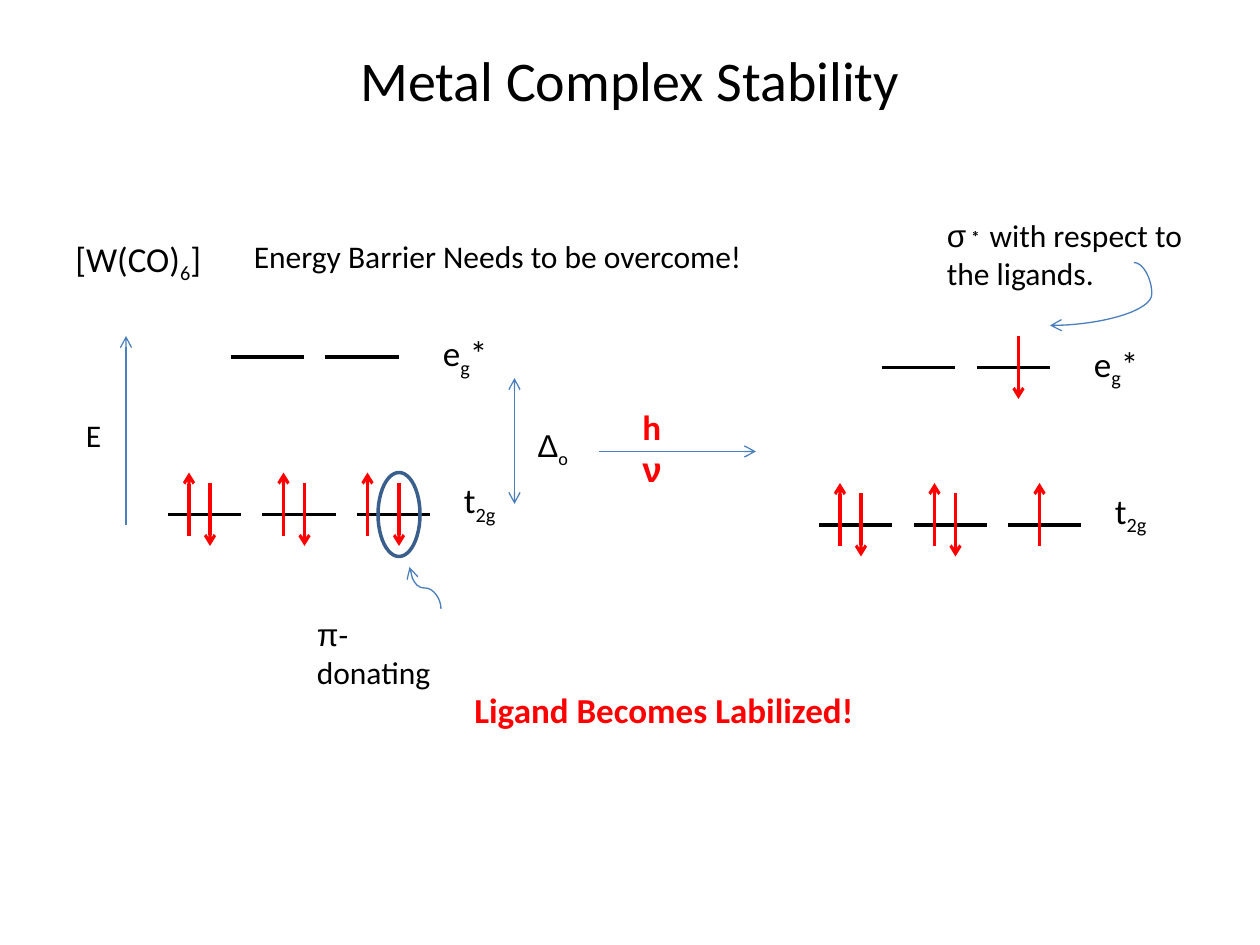
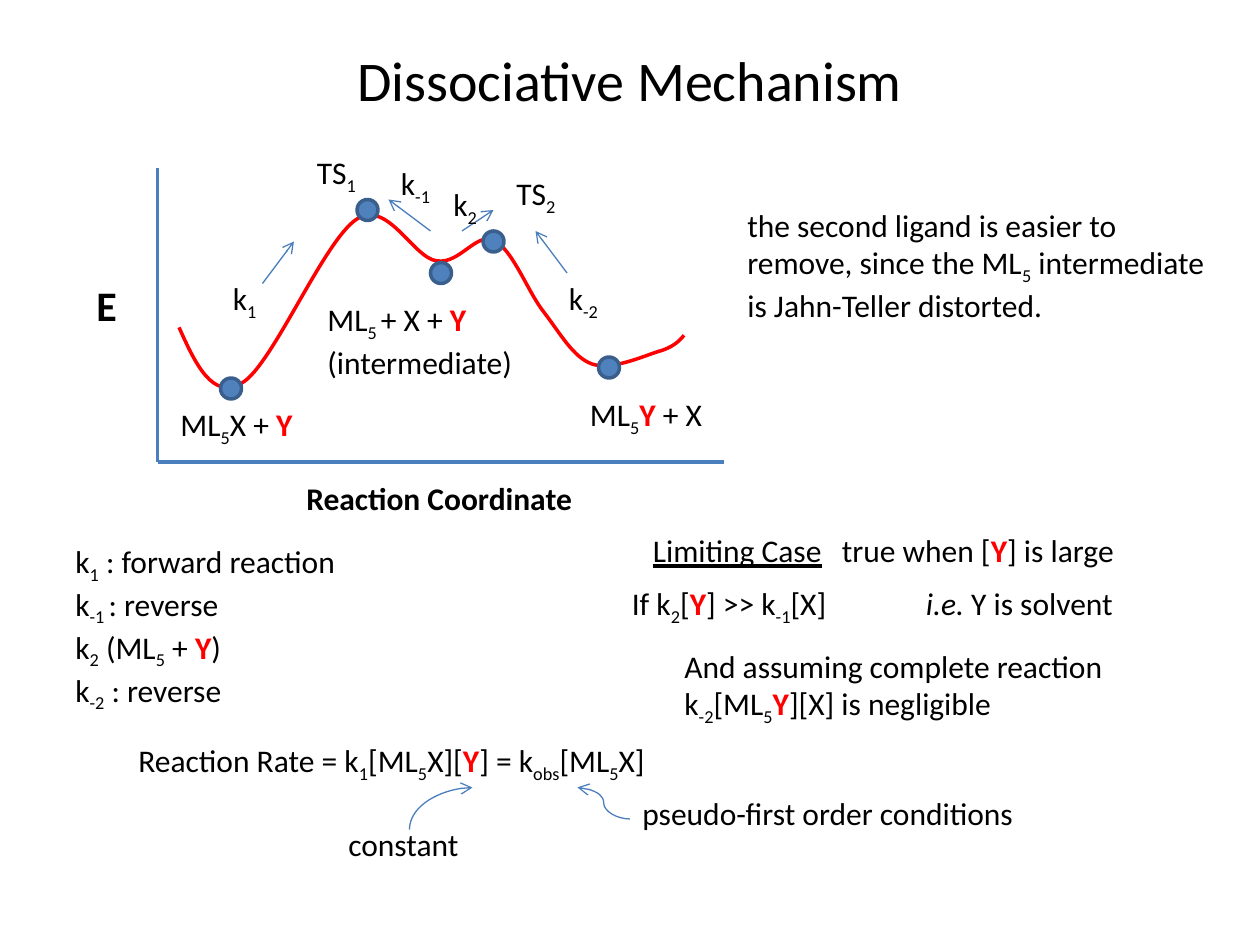
from dataclasses import dataclass

from lxml import etree
from pptx import Presentation
from pptx.dml.color import RGBColor
from pptx.enum.shapes import MSO_CONNECTOR, MSO_SHAPE
from pptx.enum.text import MSO_ANCHOR, MSO_AUTO_SIZE, PP_ALIGN
from pptx.oxml.ns import qn
from pptx.util import Cm, Pt

STRAIGHT, CURVED = MSO_CONNECTOR.STRAIGHT, MSO_CONNECTOR.CURVE
ELLIPSE = MSO_SHAPE.OVAL
CENTER, LEFT = PP_ALIGN.CENTER, PP_ALIGN.LEFT
MIDDLE, TOP = MSO_ANCHOR.MIDDLE, MSO_ANCHOR.TOP
GROW = MSO_AUTO_SIZE.SHAPE_TO_FIT_TEXT


@dataclass(frozen=True)
class Theme:
    black: str = "000000"
    red: str = "FF0000"
    blue: str = "4B7EBC"
    dot: str = "4F81BD"
    outline: str = "3A5F8C"
    font: str = "Calibri"
    symbol_font: str = "Arial"
    title: int = 32
    axis: int = 24
    label: int = 20
    body: int = 18
    thin: float = 0.75
    electron: float = 1.75
    thick: float = 2


THEME = Theme()

# Places are whole steps of a grid with 12 steps to 2.54 cm; text widths are in cm.
# Text marks: <_sub> <^raised symbol> <!red bold> <uunderlined> <iitalic> <asymbol>
STABILITY_TEXTS = [
    ("[W(CO)<_6>]", 6, 22, 3.25, {"size": THEME.label}),
    ("Energy Barrier Needs to be overcome!", 23, 22, 10.46, {}),
    ("<aΔ><_o>", 50, 40, 1.14, {}),
    ("E", 7, 39, 0.81, {}),
    ("h<aν>", 60, 38, 1.24, {"size": THEME.label, "color": THEME.red, "bold": True}),
    ("<aπ>-donating", 29, 58, 3.38, {}),
    ("<aσ><^∗ >with respect to\nthe ligands.", 89, 20, 5.44, {}),
    ("Ligand Becomes Labilized!", 44, 65, 8.23,
     {"size": THEME.label, "color": THEME.red, "bold": True}),
]
STABILITY_ARROWS = [
    ((12, 50), (12, 32), {"tail": True}),
    ((49, 36), (49, 48), {"head": True, "tail": True}),
    ((57, 43), (72, 43), {"tail": True}),
]

# Orbital diagram, drawn twice with an offset
ORBITAL_WIDTH = 7
ORBITALS = [(22, 34), (31, 34), (16, 49), (25, 49), (34, 49)]
ORBITAL_LABELS = [("e<_g>*", 41, 31, 1.45), ("t<_2g>", 43, 45, 1.22)]
PAIRED_ELECTRONS = [(18, 45, "up"), (20, 46, "down"), (27, 45, "up"), (29, 46, "down")]
ELECTRON_LENGTH = 6
DIAGRAMS = [
    ((0, 0), PAIRED_ELECTRONS + [(35, 45, "up"), (38, 46, "down")]),
    ((62, 1), PAIRED_ELECTRONS + [(37, 45, "up"), (35, 31, "down")]),
]

MECHANISM_TEXTS = [
    ("E", 8, 26, 0.94, {"size": THEME.axis, "bold": True}),
    ("Reaction Coordinate", 28, 45, 5.92, {"bold": True}),
    ("k<_1>", 21, 26, 1.02, {}),
    ("k<_-1>", 37, 15, 1.14, {}),
    ("k<_2>", 42, 17, 1.02, {}),
    ("k<_-2>", 53, 26, 1.19, {}),
    ("TS<_1>", 29, 14, 1.35, {}),
    ("TS<_2>", 48, 16, 1.35, {}),
    ("ML<_5>X + <!Y>", 16, 38, 2.82, {}),
    ("ML<_5><!Y> + X", 55, 37, 2.82, {}),
    ("ML<_5 >+ X +<! Y>\n(intermediate)", 30, 28, 4.29, {}),
    ("the second ligand is easier to remove, since the ML<_5> intermediate "
     "is Jahn-Teller distorted.", 70, 19, 9.8, {"wrap": True, "lines": 3}),
    ("k<_1> : forward reaction\nk<_-1 >: reverse\nk<_2> (ML<_5> + <!Y>)\nk<_-2> : reverse",
     6, 51, 5.92, {"wrap": True}),
    ("<uLimiting Case>\ttrue when [<!Y>] is large", 61, 50, 11.18, {}),
    ("If k<_2>[<!Y>] >> k<_-1>[X]", 59, 55, 4.52, {}),
    ("<ii.e. >Y is solvent", 87, 55, 4.34, {}),
    ("And assuming complete reaction\nk<_-2>[ML<_5><!Y>][X] is negligible", 64, 61, 9.04, {}),
    ("Reaction Rate = k<_1>[ML<_5>X][<!Y>] = k<_obs>[ML<_5>X]", 12, 70, 11.07, {}),
    ("pseudo-first order conditions", 60, 75, 8.08, {}),
    ("constant", 32, 78, 2.77, {}),
]
AXES = [((15, 16), (15, 44)), ((15, 44), (69, 44))]
RATE_ARROWS = [
    ((25, 27), (28, 23)),
    ((54, 26), (51, 22)),
    ((41, 22), (37, 19)),
    ((44, 22), (47, 20)),
]
STATES = [(34, 19), (21, 36), (41, 25), (46, 22), (57, 34)]
# Start point, then two control points and an end point for each bend (cm)
ENERGY_CURVE = [
    (3.61, 6.6),
    (3.94, 7.34), (4.29, 8.08), (4.88, 7.72),
    (5.49, 7.37), (6.53, 4.85), (7.19, 4.42),
    (7.82, 4.01), (8.33, 5.21), (8.81, 5.26),
    (9.27, 5.33), (9.6, 4.67), (9.96, 4.85),
    (10.34, 5.03), (10.64, 5.89), (10.97, 6.3),
    (11.3, 6.73), (11.56, 7.21), (11.94, 7.34),
    (12.32, 7.47), (12.95, 7.19), (13.26, 7.09),
    (13.56, 7.01), (13.69, 6.88), (13.79, 6.76),
]


def grid(steps):
    return Cm(steps * 2.54 / 12)


def rgb(color):
    return RGBColor.from_string(color)


def marked_runs(line):
    """Yield (mark, text) for each run of a marked line."""
    plain, *marked = line.split("<")
    yield "", plain
    for piece in marked:
        inside, _, after = piece.partition(">")
        yield inside[0], inside[1:]
        yield "", after


def add_text(slide, text, left, top, width, *, size=THEME.body, color=THEME.black,
             bold=False, wrap=False, lines=None, height=None, align=LEFT, anchor=TOP):
    lines = lines or text.count("\n") + 1
    box_height = height or Cm(0.25 + 0.043 * size * lines)
    shape = slide.shapes.add_textbox(grid(left), grid(top), Cm(width), box_height)
    frame = shape.text_frame
    frame.word_wrap = wrap
    if height is None:
        frame.auto_size = GROW
    frame.vertical_anchor = anchor
    for index, line in enumerate(text.split("\n")):
        paragraph = frame.paragraphs[0] if index == 0 else frame.add_paragraph()
        paragraph.alignment = align
        for mark, words in marked_runs(line):
            if not words:
                continue
            run = paragraph.add_run()
            run.text = words
            font = run.font
            font.size = Pt(size)
            font.name = THEME.symbol_font if mark in ("a", "^") else THEME.font
            font.bold = bold or mark == "!"
            font.color.rgb = rgb(THEME.red if mark == "!" else color)
            if mark == "u":
                font.underline = True
            if mark == "i":
                font.italic = True
            if mark in ("_", "^"):
                font._element.set("baseline", "-25000" if mark == "_" else "30000")


def style_connector(connector, color, width, head, tail):
    connector.line.color.rgb = rgb(color)
    connector.line.width = Pt(width)
    line = connector.line._get_or_add_ln()
    for name, wanted in (("a:headEnd", head), ("a:tailEnd", tail)):
        if wanted:
            etree.SubElement(line, qn(name)).set("type", "arrow")
    etree.SubElement(connector._element.spPr, qn("a:effectLst"))


def add_line(slide, begin, end, color=THEME.blue, width=THEME.thin, head=False, tail=False):
    connector = slide.shapes.add_connector(STRAIGHT, *map(grid, begin + end))
    style_connector(connector, color, width, head, tail)


def add_curved_arrow(slide, begin, end, preset="curvedConnector3", bend=None, upward=False):
    """Draw a curved arrow that leaves sideways, or upward by a quarter turn."""
    (x1, y1), (x2, y2) = begin, end
    if upward:
        middle_x, middle_y = (x1 + x2) / 2, (y1 + y2) / 2
        half_width, half_height = (y1 - y2) / 2, (x1 - x2) / 2
        x1, x2 = middle_x - half_width, middle_x + half_width
        y1, y2 = middle_y + half_height, middle_y - half_height
    connector = slide.shapes.add_connector(CURVED, *map(grid, (x1, y1, x2, y2)))
    properties = connector._element.spPr
    if upward:
        properties.find(qn("a:xfrm")).set("rot", str(270 * 60000))
    geometry = properties.find(qn("a:prstGeom"))
    geometry.set("prst", preset)
    if bend is not None:
        guide = etree.SubElement(geometry.find(qn("a:avLst")), qn("a:gd"))
        guide.set("name", "adj1")
        guide.set("fmla", f"val {bend}")
    style_connector(connector, THEME.blue, THEME.thin, False, True)


def add_ellipse(slide, left, top, width, height, fill=None):
    shape = slide.shapes.add_shape(ELLIPSE, *map(grid, (left, top, width, height)))
    shape.shadow.inherit = False
    if fill:
        shape.fill.solid()
        shape.fill.fore_color.rgb = rgb(fill)
    else:
        shape.fill.background()
    shape.line.color.rgb = rgb(THEME.outline)
    shape.line.width = Pt(THEME.thick)


def add_smooth_curve(slide, points):
    """Build an outline through the points and turn each three segments into one Bézier."""
    start, *others = [(Cm(x), Cm(y)) for x, y in points]
    builder = slide.shapes.build_freeform(*start)
    builder.add_line_segments(others, close=False)
    shape = builder.convert_to_shape()
    segments = list(shape._element.iter(qn("a:lnTo")))
    for first in range(0, len(segments), 3):
        bezier = etree.Element(qn("a:cubicBezTo"))
        segments[first].addprevious(bezier)
        for segment in segments[first:first + 3]:
            bezier.append(segment[0])
            segment.getparent().remove(segment)
    shape.shadow.inherit = False
    shape.fill.background()
    shape.line.color.rgb = rgb(THEME.red)
    shape.line.width = Pt(THEME.thick)


def add_titled_slide(presentation, title):
    slide = presentation.slides.add_slide(presentation.slide_layouts[6])
    add_text(slide, title, 6, 0, 22.86, size=THEME.title, wrap=True,
             height=grid(15), align=CENTER, anchor=MIDDLE)
    return slide


def add_orbital_diagram(slide, offset, electrons):
    dx, dy = offset
    for x, y in ORBITALS:
        add_line(slide, (x + dx, y + dy), (x + dx + ORBITAL_WIDTH, y + dy),
                 THEME.black, THEME.thick)
    for text, x, y, width in ORBITAL_LABELS:
        add_text(slide, text, x + dx, y + dy, width, size=THEME.label)
    for x, y, spin in electrons:
        top, bottom = (x + dx, y + dy), (x + dx, y + dy + ELECTRON_LENGTH)
        add_line(slide, bottom, top, THEME.red, THEME.electron,
                 head=spin == "down", tail=spin == "up")


def build_stability(presentation):
    slide = add_titled_slide(presentation, "Metal Complex Stability")
    for offset, electrons in DIAGRAMS:
        add_orbital_diagram(slide, offset, electrons)
    for begin, end, ends in STABILITY_ARROWS:
        add_line(slide, begin, end, **ends)
    add_ellipse(slide, 36, 45, 4, 8)
    for text, left, top, width, style in STABILITY_TEXTS:
        add_text(slide, text, left, top, width, **style)
    add_curved_arrow(slide, (42, 58), (39, 54), upward=True)
    add_curved_arrow(slide, (108, 25), (100, 31), bend=-21300)


def build_mechanism(presentation):
    slide = add_titled_slide(presentation, "Dissociative Mechanism")
    for begin, end in AXES:
        add_line(slide, begin, end, width=THEME.thick)
    add_smooth_curve(slide, ENERGY_CURVE)
    for left, top in STATES:
        add_ellipse(slide, left, top, 2, 2, THEME.dot)
    for begin, end in RATE_ARROWS:
        add_line(slide, begin, end, tail=True)
    for text, left, top, width, style in MECHANISM_TEXTS:
        add_text(slide, text, left, top, width, **style)
    add_curved_arrow(slide, (39, 79), (45, 75), preset="curvedConnector2", upward=True)
    add_curved_arrow(slide, (60, 78), (55, 75))


def main():
    presentation = Presentation()
    presentation.slide_width, presentation.slide_height = Cm(25.4), Cm(19.05)
    build_stability(presentation)
    build_mechanism(presentation)
    presentation.save("out.pptx")


if __name__ == "__main__":
    main()
